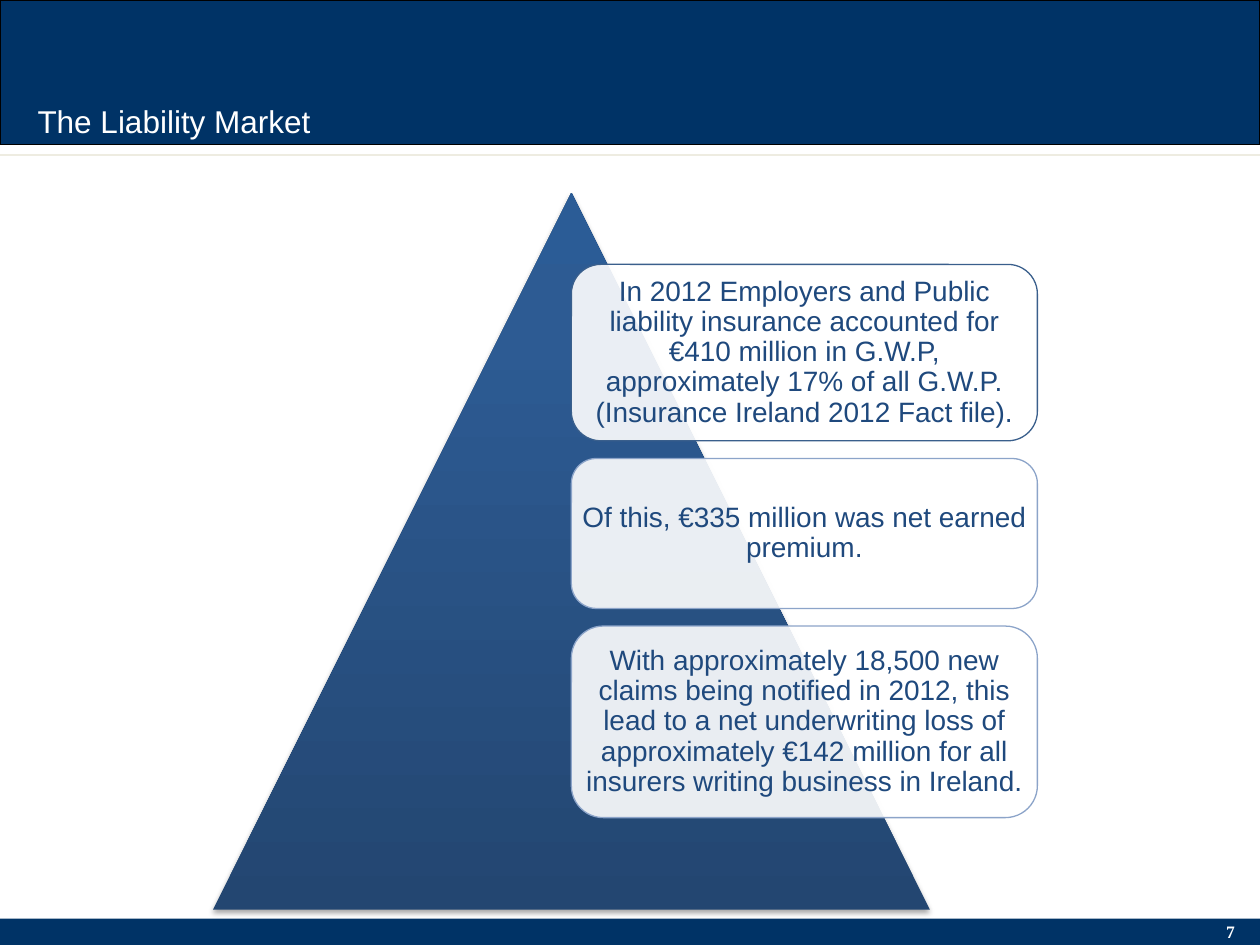
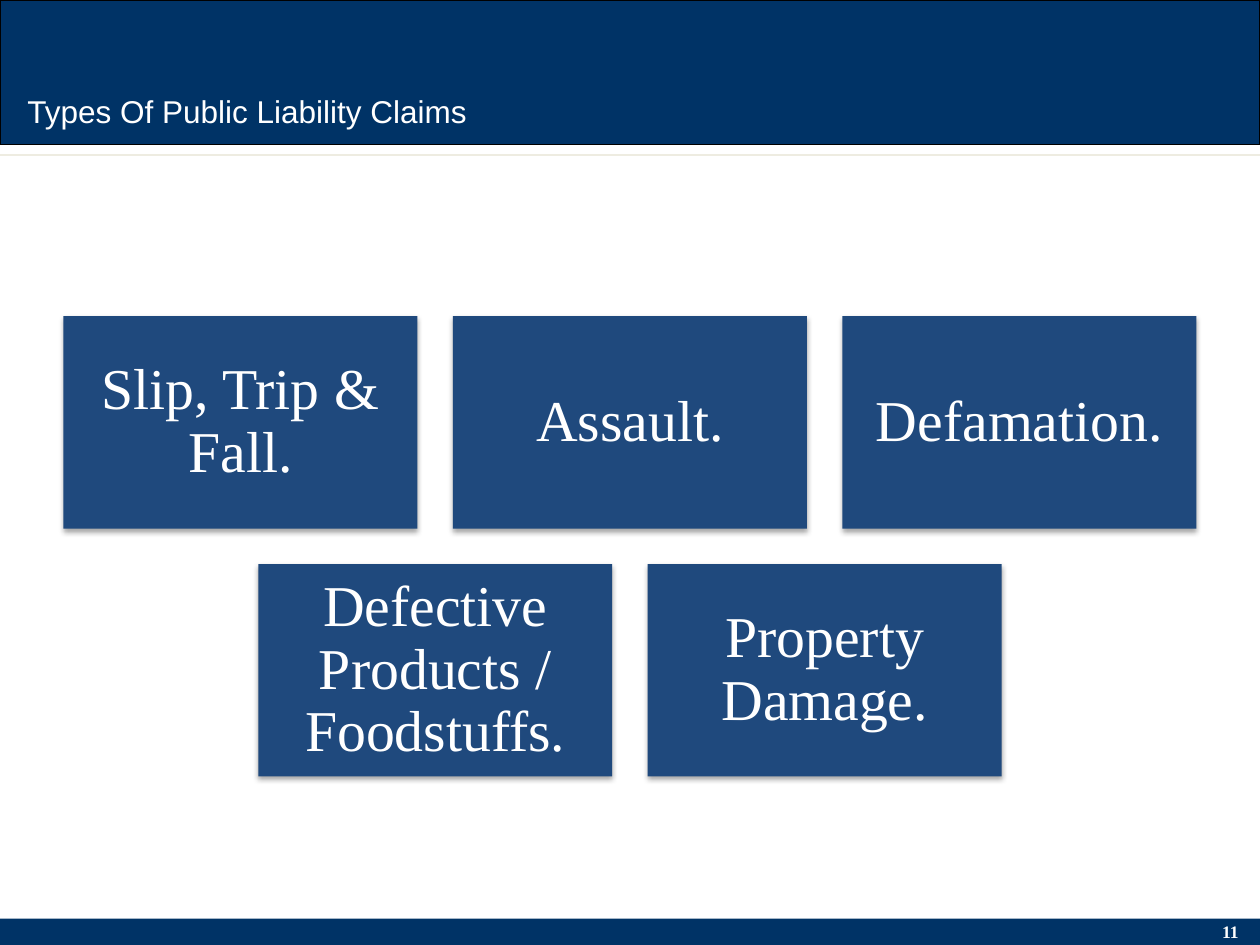
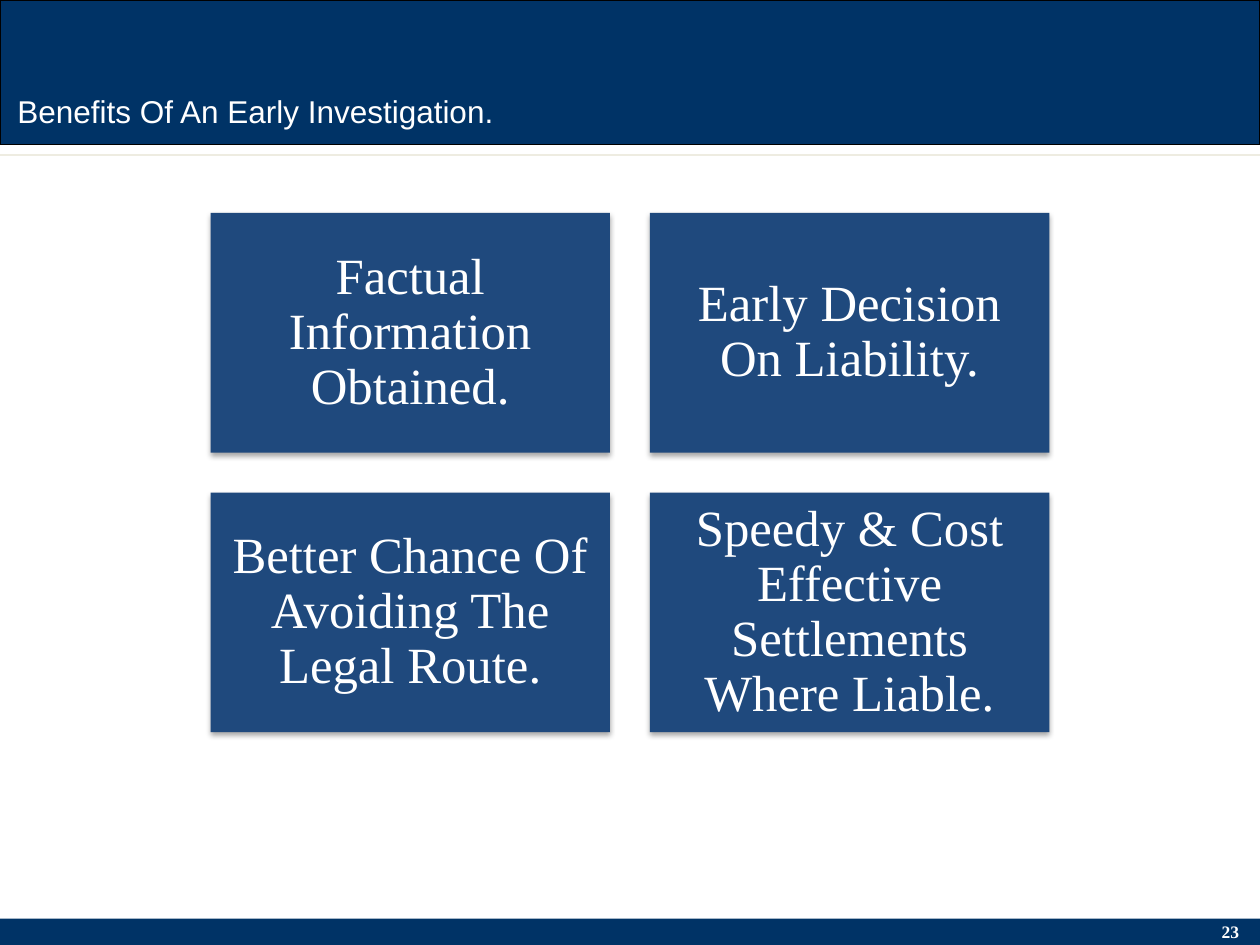
from copy import deepcopy
from dataclasses import dataclass

from lxml import etree
from pptx import Presentation
from pptx.dml.color import RGBColor
from pptx.enum.shapes import MSO_CONNECTOR, MSO_SHAPE
from pptx.enum.text import MSO_ANCHOR, PP_ALIGN
from pptx.oxml.ns import qn
from pptx.util import Inches, Pt

RECTANGLE = MSO_SHAPE.RECTANGLE
ROUNDED = MSO_SHAPE.ROUNDED_RECTANGLE
TRIANGLE = MSO_SHAPE.ISOSCELES_TRIANGLE
STRAIGHT = MSO_CONNECTOR.STRAIGHT
LEFT, CENTER = PP_ALIGN.LEFT, PP_ALIGN.CENTER
TOP, MIDDLE = MSO_ANCHOR.TOP, MSO_ANCHOR.MIDDLE


@dataclass(frozen=True)
class Theme:
    band: str = "003366"
    band_line: str = "000000"
    rule: str = "EEECE1"
    white: str = "FFFFFF"
    blue: str = "1F497D"
    first_fact_line: str = "3A5F8C"
    fact_line: str = "8CA4C9"
    pyramid: tuple = ((0, "234671"), (0.8, "2D5B93"), (1, "2B5C96"))
    sans: str = "Arial"
    serif: str = "Times New Roman"
    title_size: int = 18
    number_size: int = 10
    fact_size: int = 16
    slide_width: float = 10
    slide_height: float = 7.5


THEME = Theme()


def color(value):
    return RGBColor.from_string(value)


def add_box(slide, kind, box, fill=None, line=None):
    """Add a flat preset shape; box is left, top, width, height in inches."""
    shape = slide.shapes.add_shape(kind, *map(Inches, box))
    shape.shadow.inherit = False
    if fill:
        shape.fill.solid()
        shape.fill.fore_color.rgb = color(fill)
    if line:
        shape.line.color.rgb = color(line)
        shape.line.width = Pt(0.75)
    else:
        shape.line.fill.background()
    return shape


def write_text(shape, text, font, size, ink, align=CENTER, anchor=MIDDLE,
               margins=(0, 0), spacing=0.9, bold=False):
    """Fill a shape with one paragraph; margins are horizontal, vertical."""
    frame = shape.text_frame
    frame.word_wrap = True
    frame.vertical_anchor = anchor
    frame.margin_left = frame.margin_right = Inches(margins[0])
    frame.margin_top = frame.margin_bottom = Inches(margins[1])
    paragraph = frame.paragraphs[0]
    paragraph.alignment = align
    paragraph.line_spacing = spacing
    run = paragraph.add_run()
    run.text = text
    run.font.name = font
    run.font.size = Pt(size)
    run.font.bold = bold
    run.font.color.rgb = color(ink)


def add_label(slide, box, text, **style):
    label = slide.shapes.add_textbox(*map(Inches, box))
    write_text(label, text, ink=THEME.white, anchor=TOP,
               margins=(0.1, 0.05), spacing=1, **style)


def add_shadow(shape):
    """Put a soft shadow below the shape."""
    effects = shape._element.spPr.find(qn("a:effectLst"))
    shadow = etree.SubElement(effects, qn("a:outerShdw"), blurRad=str(Pt(3.1)),
                              dist=str(Pt(1.8)), dir="5400000", rotWithShape="0")
    ink = etree.SubElement(shadow, qn("a:srgbClr"), val="000000")
    etree.SubElement(ink, qn("a:alpha"), val="35000")


def set_gradient(shape, stops):
    """Fill upwards with (position, colour) stops, first stop at the bottom."""
    shape.fill.gradient()
    shape.fill.gradient_angle = 90
    stop_list = next(shape._element.spPr.iter(qn("a:gsLst")))
    while len(stop_list) < len(stops):
        stop_list.append(deepcopy(stop_list[-1]))
    for stop, (position, value) in zip(shape.fill.gradient_stops, stops):
        stop.position = position
        stop.color.rgb = color(value)


def add_base_slide(presentation, number, title, title_box):
    slide = presentation.slides.add_slide(presentation.slide_layouts[6])
    width = THEME.slide_width
    add_box(slide, RECTANGLE, (0, 0, width, 1.15), THEME.band, THEME.band_line)
    add_box(slide, RECTANGLE, (0, 7.29, width, 0.21), THEME.band)
    rule = slide.shapes.add_connector(
        STRAIGHT, 0, Inches(1.23), Inches(width), Inches(1.23))
    rule.line.color.rgb = color(THEME.rule)
    rule.line.width = Pt(1.5)
    etree.SubElement(rule._element.spPr, qn("a:effectLst"))
    add_label(slide, (9.57, 7.26, 0.39, 0.27), str(number),
              font=THEME.serif, size=THEME.number_size, bold=True)
    add_label(slide, title_box, title,
              font=THEME.sans, size=THEME.title_size, align=LEFT)
    return slide


def add_pyramid(slide, box, facts, gap):
    """Draw a triangle with a stack of (height, text) facts right of its axis."""
    left, top, width, height = box
    triangle = add_box(slide, TRIANGLE, box)
    set_gradient(triangle, THEME.pyramid)
    add_shadow(triangle)
    fact_top = top + 0.1 * height
    for index, (fact_height, text) in enumerate(facts):
        line = THEME.fact_line if index else THEME.first_fact_line
        fact = add_box(slide, ROUNDED,
                       (left + width / 2, fact_top, 0.65 * width, fact_height),
                       THEME.white, line)
        fill = fact._element.spPr.find(qn("a:solidFill"))
        etree.SubElement(fill[0], qn("a:alpha"), val="90000")
        write_text(fact, text, THEME.sans, THEME.fact_size, THEME.blue)
        fact_top += fact_height + gap


def add_tiles(slide, top, tile_width, rows, size, margin):
    """Draw centred rows of tiles; height and gap follow from the tile width."""
    tile_height, gap = 0.6 * tile_width, 0.1 * tile_width
    for row_index, row in enumerate(rows):
        row_width = len(row) * (tile_width + gap) - gap
        left = (THEME.slide_width - row_width) / 2
        tile_top = top + row_index * (tile_height + gap)
        for column, text in enumerate(row):
            tile_left = left + column * (tile_width + gap)
            tile = add_box(slide, RECTANGLE,
                           (tile_left, tile_top, tile_width, tile_height),
                           THEME.blue)
            add_shadow(tile)
            write_text(tile, text, THEME.serif, size, THEME.white,
                       margins=(margin, margin))


def main():
    presentation = Presentation()
    presentation.slide_width = Inches(THEME.slide_width)
    presentation.slide_height = Inches(THEME.slide_height)

    market = add_base_slide(presentation, 7, "The Liability Market",
                            (0.2, 0.76, 3.07, 0.4))
    add_pyramid(market, (1.69, 1.53, 5.69, 5.69), [
        (1.4, "In 2012 Employers and Public liability insurance accounted for "
              "€410 million in G.W.P, approximately 17% of all G.W.P. "
              "(Insurance Ireland 2012 Fact file)."),
        (1.19, "Of this, €335 million was net earned premium."),
        (1.52, "With approximately 18,500 new claims being notified in 2012, "
               "this lead to a net underwriting loss of approximately "
               "€142 million for all insurers writing business in Ireland."),
    ], gap=0.14)

    claims = add_base_slide(presentation, 11, "Types Of Public Liability Claims",
                            (0.12, 0.68, 3.7, 0.4))
    add_tiles(claims, 2.51, 2.81, [
        ("Slip, Trip & Fall.", "Assault.", "Defamation."),
        ("Defective Products / Foodstuffs.", "Property Damage."),
    ], size=33, margin=0.14)

    benefits = add_base_slide(presentation, 23,
                              "Benefits Of An Early Investigation.",
                              (0.04, 0.68, 4.8, 0.4))
    add_tiles(benefits, 1.69, 3.17, [
        ("Factual Information Obtained.", "Early Decision On Liability."),
        ("Better Chance Of Avoiding The Legal Route.",
         "Speedy & Cost Effective Settlements Where Liable."),
    ], size=29, margin=0.12)

    presentation.save("out.pptx")


if __name__ == "__main__":
    main()
